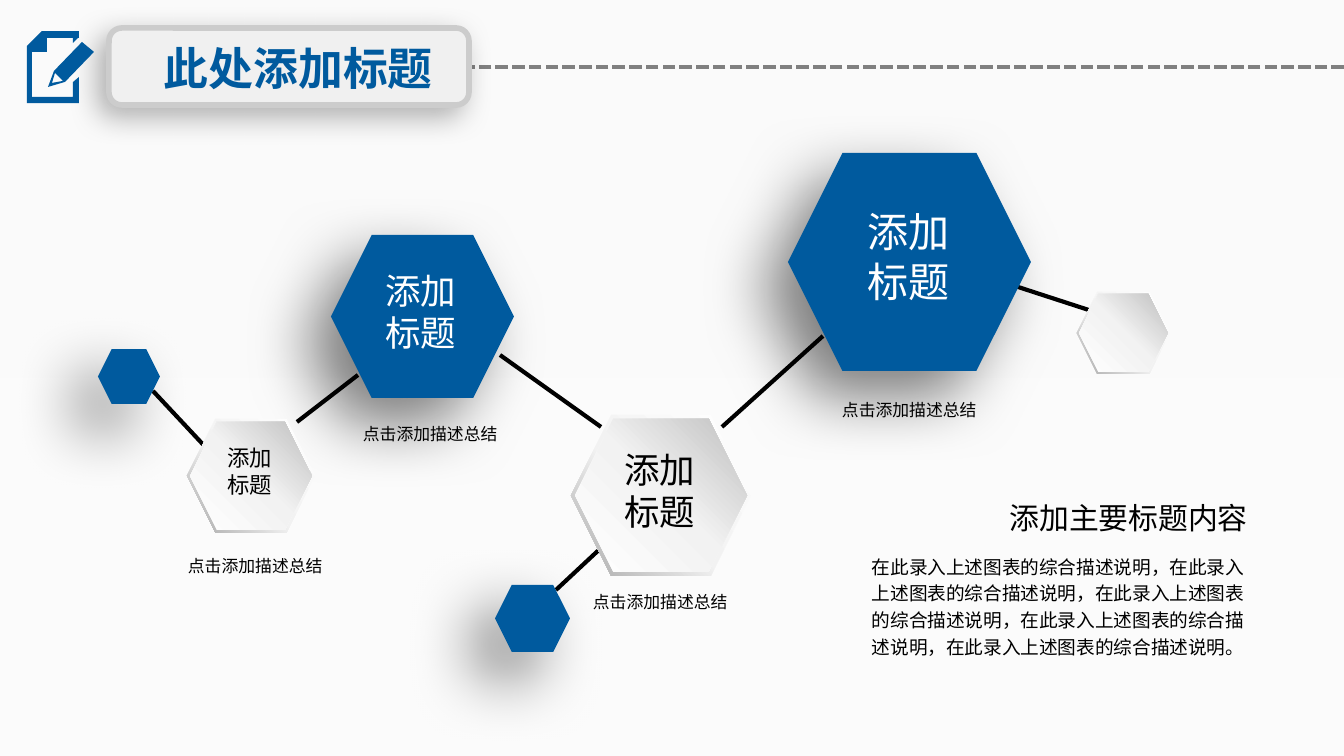
import collections
import dataclasses

import lxml.etree
import pptx
import pptx.dml.color
import pptx.enum.dml
import pptx.enum.shapes
import pptx.enum.text
import pptx.oxml.ns
import pptx.util

PX = 914400 / 134.4
SHAPES = pptx.enum.shapes.MSO_SHAPE
ALIGN = pptx.enum.text.PP_ALIGN
QN = pptx.oxml.ns.qn

Box = collections.namedtuple("Box", "left top width height")
Shadow = collections.namedtuple("Shadow", "alpha blur distance angle")
Node = collections.namedtuple("Node", "box filled label_size caption_offset", defaults=(None, None))


@dataclasses.dataclass(frozen=True)
class Theme:
    font: str = "Arial"
    blue: str = "005A9E"
    black: str = "000000"
    white: str = "FFFFFF"
    dash: str = "808080"
    frame: str = "CCCCCC"
    backdrop: tuple = ((0, "FAFAFA"), (50, "FBFBFB"), (100, "FCFCFC"))
    banner: tuple = ((0, "F0F0F0"), (100, "F1F1F1"))
    rim: tuple = ((0, "FFFFFF"), (55, "F2F2F2"), (100, "A6A6A6"))
    face: tuple = ((0, "FFFFFF"), (51, "F2F2F2"), (100, "BFBFBF"))
    banner_shadow: Shadow = Shadow(30, 16, 7, 135)
    node_shadow: Shadow = Shadow(50, 35, 20, 135)
    title: int = 24
    heading: int = 16
    body: int = 10
    caption: int = 9
    caption_leading: float = 13.6
    stroke: float = 2.25


THEME = Theme()
LABEL = ("添加", "标题")
CAPTION = "点击添加描述总结"
SUMMARY = "，".join(["在此录入上述图表的综合描述说明"] * 5) + "。"

NODES = (
    Node(Box(788, 153, 243, 218), True, 22, (43, 237)),
    Node(Box(495, 585, 75, 67), True),
    Node(Box(331, 235, 183, 163), True, 19, (21, 179)),
    Node(Box(1077, 292, 93, 82), False),
    Node(Box(571, 415, 180, 161), False, 19, (11, 167)),
    Node(Box(187, 419, 128, 114), False, 12, (-10, 127)),
    Node(Box(98, 349, 62, 55), True),
)
LINKS = (
    ((1015, 286), (1098, 313)),
    ((722, 427), (823, 336)),
    ((297, 422), (358, 375)),
    ((500, 355), (601, 427)),
    ((153, 391), (284, 531)),
    ((556, 590), (601, 548)),
)
SHEET = ((46, 66), (5, 66), (5, 21), (20, 21), (20, 7), (46, 7), (46, 12), (51, 7),
         (52, 7), (52, 0), (15, 0), (0, 15), (0, 72), (52, 72), (52, 46), (46, 51))
PENCIL = ((27, 40), (21, 56), (38, 51), (67, 21), (55, 11))
PENCIL_TIP = ((36, 50), (25, 52), (28, 42))


def emu(px):
    return round(px * PX)


def rgb(value):
    return pptx.dml.color.RGBColor.from_string(value)


def paint_solid(shape, color):
    shape.fill.solid()
    shape.fill.fore_color.rgb = rgb(color)


def paint_gradient(fill, element, stops, clockwise):
    fill.gradient()
    fill.gradient_angle = (360 - clockwise) % 360
    stop_list = element.find(".//" + QN("a:gsLst"))
    for old in list(stop_list):
        stop_list.remove(old)
    for percent, color in stops:
        stop = lxml.etree.SubElement(stop_list, QN("a:gs"), pos=str(percent * 1000))
        lxml.etree.SubElement(stop, QN("a:srgbClr"), val=color)


def cast_shadow(shape, shadow):
    effects = shape.element.spPr.find(QN("a:effectLst"))
    outer = lxml.etree.SubElement(
        effects, QN("a:outerShdw"), blurRad=str(pptx.util.Pt(shadow.blur)),
        dist=str(pptx.util.Pt(shadow.distance)), dir=str(shadow.angle * 60000),
        algn="tr", rotWithShape="0")
    color = lxml.etree.SubElement(outer, QN("a:srgbClr"), val=THEME.black)
    lxml.etree.SubElement(color, QN("a:alpha"), val=str(shadow.alpha * 1000))


def add_preset(page, kind, box):
    shape = page.shapes.add_shape(kind, *map(emu, box))
    shape.shadow.inherit = False
    shape.line.fill.background()
    return shape


def add_line(page, start, end, color):
    line = page.shapes.add_connector(
        pptx.enum.shapes.MSO_CONNECTOR.STRAIGHT, *map(emu, start + end))
    line.line.color.rgb = rgb(color)
    line.line.width = pptx.util.Pt(THEME.stroke)
    lxml.etree.SubElement(line.element.spPr, QN("a:effectLst"))
    return line


def add_text(page, box, lines, size, color, align=ALIGN.LEFT, bold=False,
             wrap=True, spacing=None, inset=(13, 7)):
    frame = page.shapes.add_textbox(*map(emu, box)).text_frame
    frame.word_wrap = wrap
    frame.auto_size = pptx.enum.text.MSO_AUTO_SIZE.SHAPE_TO_FIT_TEXT
    frame.margin_left = frame.margin_right = emu(inset[0])
    frame.margin_top = frame.margin_bottom = emu(inset[1])
    frame.text = "\n".join(lines)
    for para in frame.paragraphs:
        para.alignment = align
        para.line_spacing = spacing
        para.font.name = THEME.font
        para.font.size = pptx.util.Pt(size)
        para.font.bold = bold
        para.font.color.rgb = rgb(color)


def add_outline(page, box, *contours):
    first, *holes = contours
    builder = page.shapes.build_freeform(*first[0], scale=PX)
    builder.add_line_segments(first[1:], close=True)
    for hole in holes:
        builder.move_to(*hole[0])
        builder.add_line_segments(hole[1:], close=True)
    outline = builder.convert_to_shape(emu(box.left), emu(box.top))
    outline.shadow.inherit = False
    outline.line.fill.background()
    paint_solid(outline, THEME.blue)


def add_header(page, box):
    middle = box.top + 36
    rule = add_line(page, (box.left + box.width, middle), (box.left + 402, middle), THEME.dash)
    rule.line.dash_style = pptx.enum.dml.MSO_LINE.SQUARE_DOT
    banner = add_preset(page, SHAPES.ROUNDED_RECTANGLE,
                        Box(box.left + 82, box.top - 3, 360, 77))
    paint_gradient(banner.fill, banner.element, THEME.banner, 45)
    banner.line.color.rgb = rgb(THEME.frame)
    banner.line.width = pptx.util.Pt(3)
    cast_shadow(banner, THEME.banner_shadow)
    add_text(page, Box(box.left + 124, box.top + 3, 298, 67), ["此处添加标题"],
             THEME.title, THEME.blue, bold=True, wrap=False)
    add_outline(page, box, SHEET)
    add_outline(page, box, PENCIL, PENCIL_TIP)


def add_node(page, node):
    box = node.box
    inset = max(2, round(box.width * 0.02))
    rim = add_preset(page, SHAPES.HEXAGON, box)
    face = add_preset(page, SHAPES.HEXAGON, Box(
        box.left + inset, box.top + inset, box.width - 2 * inset, box.height - 2 * inset))
    if node.filled:
        paint_solid(rim, THEME.blue)
        paint_solid(face, THEME.blue)
        cast_shadow(rim, THEME.node_shadow)
    else:
        paint_gradient(rim.fill, rim.element, THEME.rim, 135)
        paint_gradient(face.fill, face.element, THEME.face, 315)
    if node.label_size:
        width = round(3.7 * node.label_size + 28)
        height = round(4.6 * node.label_size + 12)
        label = Box(box.left + (box.width - width) // 2 - 1,
                    box.top + (box.height - height) // 2 - 5, width, height)
        add_text(page, label, LABEL, node.label_size,
                 THEME.white if node.filled else THEME.black, ALIGN.CENTER, wrap=False)
        across, down = node.caption_offset
        add_text(page, Box(box.left + across, box.top + down, 200, 35), [CAPTION],
                 THEME.caption, THEME.black,
                 spacing=pptx.util.Pt(THEME.caption_leading), inset=(11, 5))


def add_summary(page, box):
    add_text(page, Box(box.left + 56, box.top, 341, 48), ["添加主要标题内容"],
             THEME.heading, THEME.black, ALIGN.RIGHT, inset=(12, 7))
    add_text(page, Box(box.left, box.top + 53, box.width, 118), [SUMMARY],
             THEME.body, THEME.black, spacing=1.2, inset=(9, 5))


def main():
    deck = pptx.Presentation()
    deck.slide_width, deck.slide_height = emu(1344), emu(756)
    page = deck.slides.add_slide(deck.slide_layouts[6])
    paint_gradient(page.background.fill, page.element, THEME.backdrop, 90)
    add_header(page, Box(27, 31, 1317, 72))
    for start, end in LINKS:
        add_line(page, start, end, THEME.black)
    for node in NODES:
        add_node(page, node)
    add_summary(page, Box(863, 493, 403, 171))
    deck.save("out.pptx")


if __name__ == "__main__":
    main()
